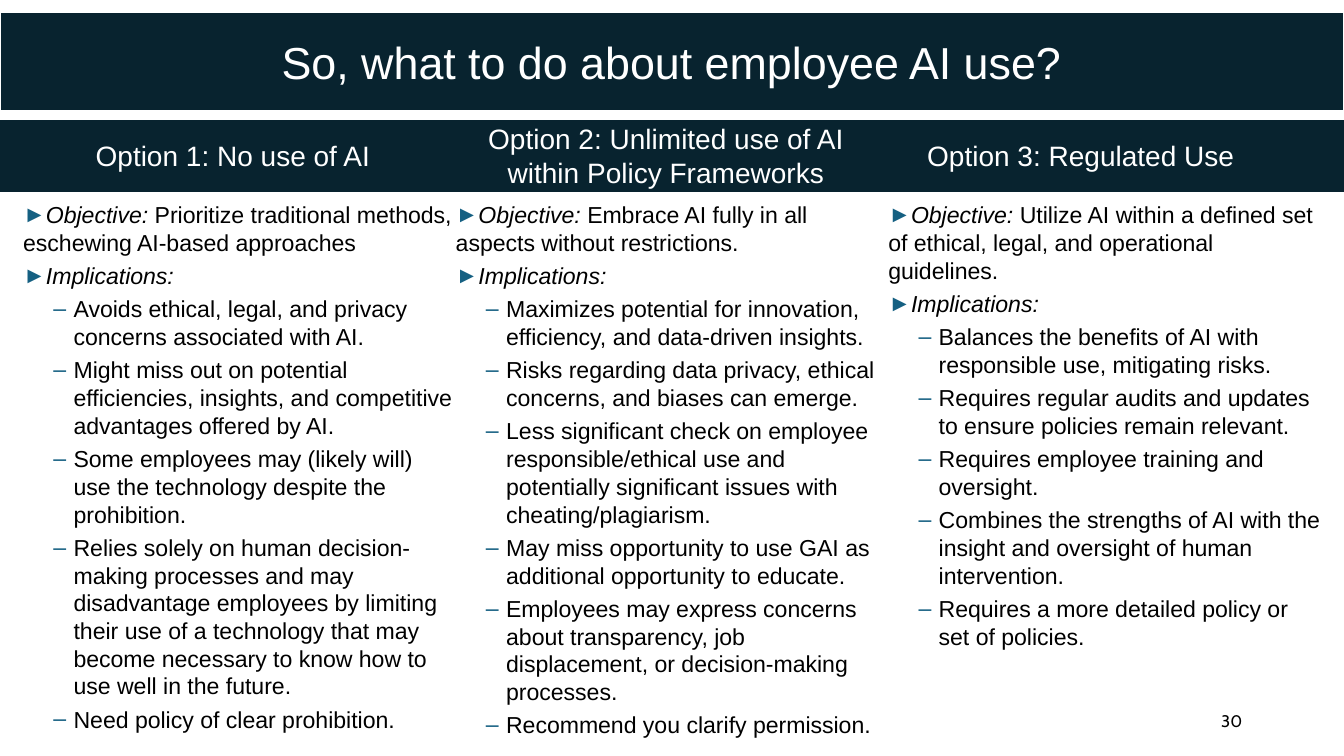
from dataclasses import dataclass

from lxml.etree import SubElement
from pptx import Presentation
from pptx.dml.color import RGBColor
from pptx.enum.shapes import MSO_SHAPE
from pptx.enum.text import MSO_ANCHOR, MSO_AUTO_SIZE, PP_ALIGN
from pptx.oxml.ns import qn
from pptx.util import Inches, Pt

NAVY, TEAL, WHITE, BLACK = "08232F", "156082", "FFFFFF", "000000"
COLUMN_LEFT, COLUMN_TOP, COLUMN_WIDTH, COLUMN_HEIGHT = 0.23, 1.99, 4.29, 5.4


@dataclass
class Box:
    left: float
    top: float
    width: float
    height: float

    def lengths(self) -> list:
        return [Inches(v) for v in (self.left, self.top, self.width, self.height)]


@dataclass
class Option:
    heading: str
    heading_box: Box
    objective: str
    implications: list[str]


OPTIONS = [
    Option("Option 1: No use of AI", Box(0.72, 1.33, 3.18, 0.44),
           "Prioritize traditional methods, eschewing AI-based approaches", [
               "Avoids ethical, legal, and privacy concerns associated with AI.",
               "Might miss out on potential efficiencies, insights, and competitive "
               "advantages offered by AI.",
               "Some employees may (likely will) use the technology despite the prohibition.",
               "Relies solely on human decision-making processes and may disadvantage "
               "employees by limiting their use of a technology that may become necessary "
               "to know how to use well in the future.",
               "Need policy of clear prohibition."]),
    Option("Option 2: Unlimited use of AI within Policy Frameworks",
           Box(4.49, 1.16, 4.23, 0.77),
           "Embrace AI fully in all aspects without restrictions.", [
               "Maximizes potential for innovation, efficiency, and data-driven insights.",
               "Risks regarding data privacy, ethical concerns, and biases can emerge.",
               "Less significant check on employee responsible/ethical use and potentially "
               "significant issues with cheating/plagiarism.",
               "May miss opportunity to use GAI as additional opportunity to educate.",
               "Employees may express concerns about transparency, job displacement, or "
               "decision-making processes.",
               "Recommend you clarify permission."]),
    Option("Option 3: Regulated Use", Box(9.02, 1.33, 3.4, 0.44),
           "Utilize AI within a defined set of ethical, legal, and operational guidelines.", [
               "Balances the benefits of AI with responsible use, mitigating risks.",
               "Requires regular audits and updates to ensure policies remain relevant.",
               "Requires employee training and oversight.",
               "Combines the strengths of AI with the insight and oversight of human "
               "intervention.",
               "Requires a more detailed policy or set of policies."]),
]


def rgb(color: str) -> RGBColor:
    return RGBColor.from_string(color)


def set_attributes(target, values: dict) -> None:
    for name, value in values.items():
        setattr(target, name, value)


def add_run(p, text: str, size: float, color: str, font: str = "Arial",
            italic: bool = False) -> None:
    r = p.add_run()
    r.text = text
    set_attributes(r.font, {"name": font, "size": Pt(size), "italic": italic})
    r.font.color.rgb = rgb(color)


def paint(sp, fill: str, line: str, width: float) -> None:
    sp.fill.solid()
    sp.fill.fore_color.rgb = rgb(fill)
    sp.line.color.rgb = rgb(line)
    sp.line.width = Pt(width)
    # Square corners
    SubElement(sp.line._get_or_add_ln(), qn("a:miter")).set("lim", "800000")


def add_label(s, box: Box, text: str, size: float, color: str, align,
              font: str = "Arial", anchor=MSO_ANCHOR.TOP) -> None:
    tf = s.shapes.add_textbox(*box.lengths()).text_frame
    set_attributes(tf, {"word_wrap": True, "vertical_anchor": anchor})
    p = tf.paragraphs[0]
    p.alignment = align
    add_run(p, text, size, color, font)


def add_bullet(tf, char: str, margin: float, runs: list[tuple[str, bool]],
               first: bool = False) -> None:
    p = tf.paragraphs[0] if first else tf.add_paragraph()
    p.space_before = Pt(0 if first else 4)
    pPr = p._p.get_or_add_pPr()
    pPr.set("marL", str(Inches(margin)))
    pPr.set("indent", str(Inches(-0.2)))
    color = SubElement(pPr, qn("a:buClr"))
    SubElement(color, qn("a:srgbClr")).set("val", TEAL)
    SubElement(pPr, qn("a:buFont")).set("typeface", "Arial")
    SubElement(pPr, qn("a:buChar")).set("char", char)
    for text, italic in runs:
        add_run(p, text, 16.5, BLACK, italic=italic)


def add_option(s, index: int, option: Option) -> None:
    add_label(s, option.heading_box, option.heading, 20, WHITE, PP_ALIGN.CENTER)
    column = Box(COLUMN_LEFT + index * COLUMN_WIDTH, COLUMN_TOP, COLUMN_WIDTH, COLUMN_HEIGHT)
    tf = s.shapes.add_textbox(*column.lengths()).text_frame
    set_attributes(tf, {"word_wrap": True, "margin_left": 0, "margin_right": 0,
                        "margin_top": 0, "margin_bottom": 0})
    add_bullet(tf, "►", 0, [("Objective: ", True), (option.objective, False)], first=True)
    add_bullet(tf, "►", 0, [("Implications:", True)])
    for implication in option.implications:
        add_bullet(tf, "–", 0.5, [(implication, False)])


def add_title(s, text: str) -> None:
    title = s.shapes.title
    box = Box(0, 0.12, 13.33, 0.98)
    set_attributes(title, dict(zip(("left", "top", "width", "height"), box.lengths())))
    paint(title, NAVY, WHITE, 0.75)
    tf = title.text_frame
    set_attributes(tf, {"auto_size": MSO_AUTO_SIZE.NONE, "word_wrap": True,
                        "vertical_anchor": MSO_ANCHOR.MIDDLE,
                        "margin_top": Inches(0.01), "margin_bottom": 0})
    tf.paragraphs[0].alignment = PP_ALIGN.CENTER
    add_run(tf.paragraphs[0], text, 32, WHITE)


def main() -> None:
    prs = Presentation()
    set_attributes(prs, {"slide_width": Inches(13.33), "slide_height": Inches(7.5)})
    s = prs.slides.add_slide(prs.slide_layouts.get_by_name("Title Only"))

    # Title bar
    add_title(s, "So, what to do about employee AI use?")

    # Band behind the option headings
    band = s.shapes.add_shape(MSO_SHAPE.RECTANGLE, *Box(0.13, 1.33, 13.1, 0.44).lengths())
    band.shadow.inherit = False
    paint(band, NAVY, NAVY, 20)

    # Option columns
    for index, option in enumerate(OPTIONS):
        add_option(s, index, option)

    # Slide number
    add_label(s, Box(9.42, 6.95, 3, 0.4), "30", 12, BLACK, PP_ALIGN.RIGHT, "Cabin",
              MSO_ANCHOR.MIDDLE)

    prs.save("out.pptx")


if __name__ == "__main__":
    main()
